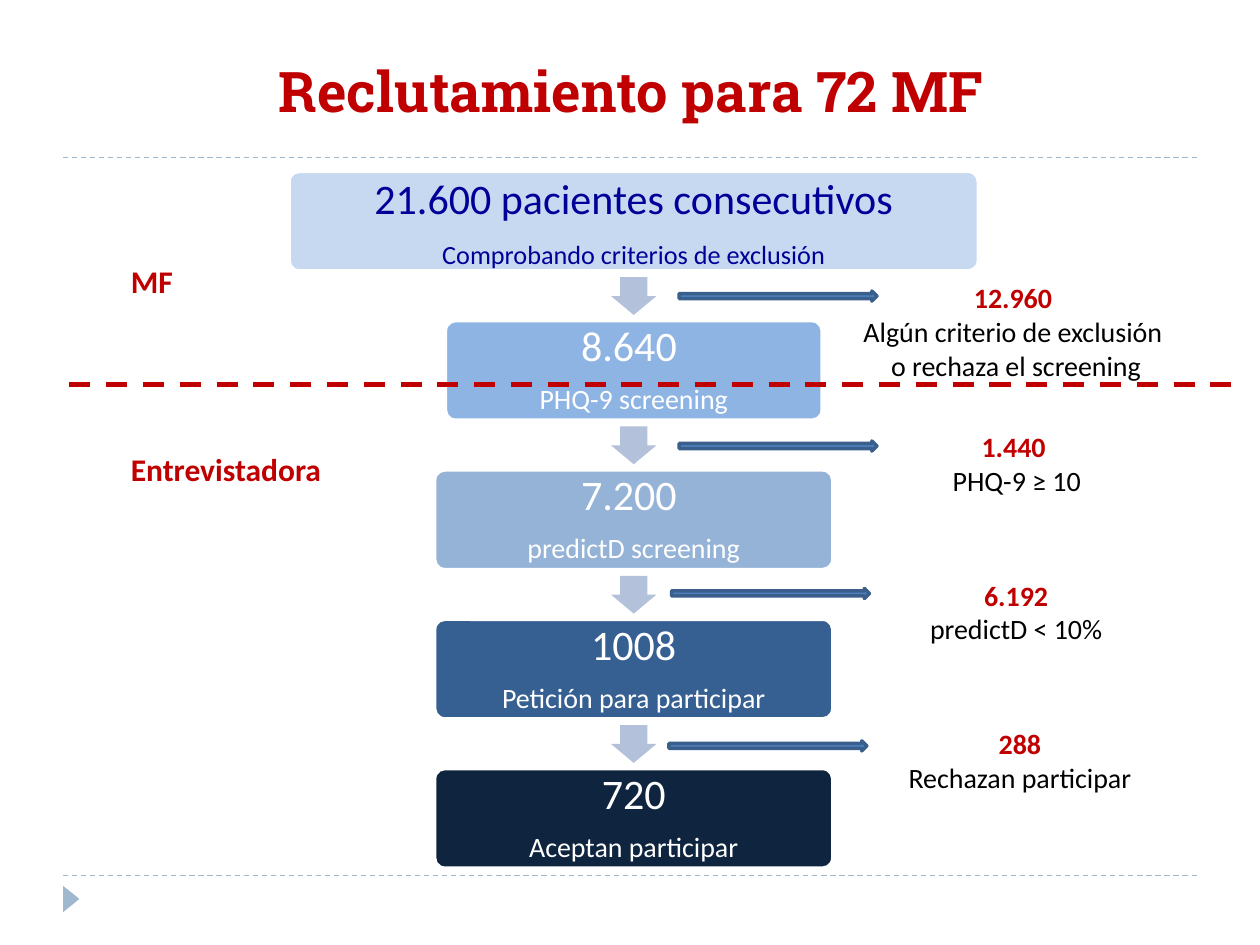
from pptx import Presentation
from pptx.dml.color import RGBColor
from pptx.enum.dml import MSO_LINE
from pptx.enum.shapes import MSO_CONNECTOR, MSO_SHAPE
from pptx.enum.text import MSO_ANCHOR, PP_ALIGN
from pptx.oxml.ns import qn
from pptx.util import Inches, Pt
from lxml.etree import SubElement

RED = RGBColor(0xC0, 0x00, 0x00)
BLACK = RGBColor(0x00, 0x00, 0x00)
WHITE = RGBColor(0xFF, 0xFF, 0xFF)
NAVY = RGBColor(0x00, 0x00, 0x99)
MIST = RGBColor(0x9F, 0xB8, 0xCD)
DOWN_FILL = RGBColor(0xB3, 0xC1, 0xDB)
EXIT_FILL = RGBColor(0x4F, 0x81, 0xBD)
EXIT_LINE = RGBColor(0x3A, 0x5F, 0x8C)

CENTER_X = 5.03
STEP_TOP, STEP_HEIGHT, PITCH = 1.36, 0.79, 1.185

# count, caption, caption size, width, fill, text colour, line spacing
STEPS = [
    ("21.600 pacientes consecutivos", "Comprobando criterios de exclusión", 15,
     5.47, RGBColor(0xC6, 0xD9, 0xF1), NAVY, 1.0),
    ("8.640 ", "PHQ-9 screening", 16, 2.99, RGBColor(0x8E, 0xB4, 0xE3), WHITE, 0.9),
    ("7.200 ", "predictD screening", 16, 3.16, RGBColor(0x95, 0xB3, 0xD7), WHITE, 0.9),
    ("1008", "Petición para participar", 16, 3.16, RGBColor(0x37, 0x60, 0x92), WHITE, 0.9),
    ("720", "Aceptan participar", 16, 3.16, RGBColor(0x0F, 0x24, 0x3E), WHITE, 0.9),
]

# count, reasons, text left, text width, arrow left, arrow top
EXITS = [
    ("12.960 ", ["Algún criterio de exclusión ", "o rechaza el screening"], 6.65, 2.83, 5.39, 2.31),
    ("1.440 ", ["PHQ-9 ≥ 10"], 7.44, 1.26, 5.39, 3.5),
    ("6.192", ["predictD < 10%"], 7.28, 1.57, 5.33, 4.67),
    ("288 ", ["Rechazan participar "], 6.98, 2.28, 5.31, 5.88),
]


def add_text(tf, text, size, color, first=False, font="Calibri", bold=False,
             align=PP_ALIGN.CENTER, spacing=None, after=None):
    p = tf.paragraphs[0] if first else tf.add_paragraph()
    p.alignment = align
    p.line_spacing = spacing
    p.space_after = after
    r = p.add_run()
    r.text = text
    r.font.name, r.font.size, r.font.bold = font, Pt(size), bold
    r.font.color.rgb = color


def add_box(slide, left, top, width, height, wrap=True, anchor=MSO_ANCHOR.TOP):
    box = slide.shapes.add_textbox(Inches(left), Inches(top), Inches(width), Inches(height))
    tf = box.text_frame
    tf.word_wrap, tf.vertical_anchor = wrap, anchor
    return tf


def add_shape(slide, kind, left, top, width, height, fill, line=None):
    sp = slide.shapes.add_shape(kind, Inches(left), Inches(top), Inches(width), Inches(height))
    sp.shadow.inherit = False
    sp.fill.solid()
    sp.fill.fore_color.rgb = fill
    if line is None:
        sp.line.fill.background()
    else:
        sp.line.color.rgb = line
        sp.line.width = Pt(2)
    return sp


def add_dashed_line(slide, x1, x2, y, color, width):
    line = slide.shapes.add_connector(
        MSO_CONNECTOR.STRAIGHT, Inches(x1), Inches(y), Inches(x2), Inches(y))
    line.line.color.rgb = color
    line.line.width = Pt(width)
    line.line.dash_style = MSO_LINE.DASH
    SubElement(line._element.spPr, qn("a:effectLst"))


def add_frame(slide, left, top, width, height):
    """Rules above and below the content, with the corner marker."""
    for y in (top + height, top):
        add_dashed_line(slide, left, left + width, y, MIST, 0.75)
    marker = add_shape(slide, MSO_SHAPE.ISOSCELES_TRIANGLE, left - 0.04, top + height + 0.12,
                       0.21, 0.13, MIST)
    marker.rotation = 90


def add_title(slide, left, top, width, height):
    tf = add_box(slide, left, top, width, height, anchor=MSO_ANCHOR.BOTTOM)
    add_text(tf, "Reclutamiento para 72 MF", 32, RED, first=True, font="Roboto Slab", bold=True)


def add_step(slide, center, top, height, step):
    """One stage of the flow: the count with its caption below."""
    count, caption, size, width, fill, color, spacing = step
    sp = add_shape(slide, MSO_SHAPE.ROUNDED_RECTANGLE, center - width / 2, top,
                   width, height, fill, WHITE)
    sp.adjustments[0] = 0.1
    tf = sp.text_frame
    tf.word_wrap, tf.vertical_anchor = True, MSO_ANCHOR.MIDDLE
    tf.margin_left = tf.margin_right = tf.margin_top = tf.margin_bottom = Inches(0.1)
    for text, points in ((count, 24), (caption, size)):
        add_text(tf, text, points, color, first=text == count,
                 spacing=spacing, after=Pt(0.35 * points))


def add_flow(slide, center, top, height, pitch):
    for i, step in enumerate(STEPS):
        y = top + i * pitch
        add_step(slide, center, y, height, step)
        if i < len(STEPS) - 1:
            arrow = add_shape(slide, MSO_SHAPE.DOWN_ARROW, center - 0.18, y + height + 0.05,
                              0.36, 0.3, DOWN_FILL)
            arrow.adjustments[0] = 0.6


def add_exits(slide, top, pitch):
    """Patients leaving at each step: arrow, count and reason."""
    for i, (count, reasons, left, width, arrow_left, arrow_top) in enumerate(EXITS):
        add_shape(slide, MSO_SHAPE.RIGHT_ARROW, arrow_left, arrow_top, 1.57, 0.08,
                  EXIT_FILL, EXIT_LINE)
        tf = add_box(slide, left, top + i * pitch, width, 0.37 + 0.27 * len(reasons))
        add_text(tf, count, 16, RED, first=True, bold=True)
        for reason in reasons:
            add_text(tf, reason, 16, BLACK)


def add_roles(slide, left, right, y):
    """Divider between the two people in charge, with their labels."""
    add_dashed_line(slide, left, right, y, RED, 3)
    for text, top, width in (("MF", 2.03, 0.58), ("Entrevistadora", 3.52, 1.93)):
        tf = add_box(slide, left + 0.39, top, width, 0.4, wrap=False)
        add_text(tf, text, 18, RED, first=True, bold=True, align=PP_ALIGN.LEFT)


def main():
    prs = Presentation()
    prs.slide_width, prs.slide_height = Inches(10), Inches(7.5)
    slide = prs.slides.add_slide(prs.slide_layouts[6])
    add_frame(slide, 0.5, 1.25, 9, 5.7)
    add_title(slide, 0.51, 0.03, 9, 1)
    add_flow(slide, CENTER_X, STEP_TOP, STEP_HEIGHT, PITCH)
    add_exits(slide, 2.18, 1.18)
    add_roles(slide, 0.55, 9.77, 3.05)
    prs.save("out.pptx")


if __name__ == "__main__":
    main()
